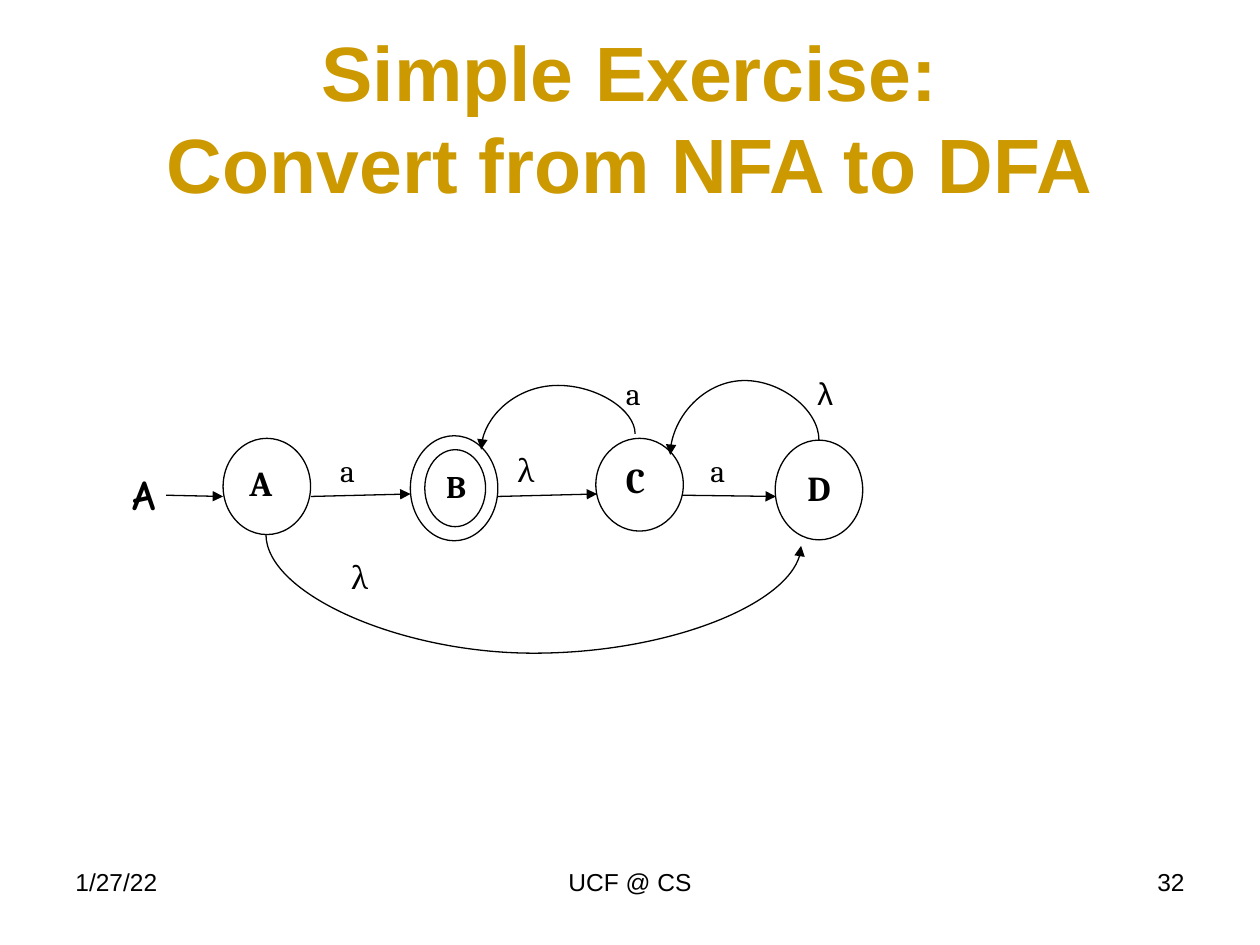
from lxml.etree import SubElement
from pptx import Presentation
from pptx.dml.color import RGBColor
from pptx.enum.shapes import MSO_CONNECTOR, MSO_SHAPE
from pptx.enum.text import MSO_ANCHOR, MSO_AUTO_SIZE, PP_ALIGN
from pptx.oxml.ns import qn
from pptx.util import Pt

BLACK = RGBColor(0, 0, 0)
WHITE = RGBColor(255, 255, 255)
GOLD = RGBColor(0xCC, 0x99, 0x00)
SERIF = "Cambria"
SANS = "Arial"


class Board:
    thin = Pt(0.75)
    base = {"name": SERIF, "size": Pt(18), "bold": False}

    def __init__(self, slide):
        self.slide = slide
        self.shapes = slide.shapes

    def put(self, shape, text, align=PP_ALIGN.LEFT, color=BLACK,
            anchor=MSO_ANCHOR.TOP, **style):
        frame = shape.text_frame
        frame.text = text
        form = {"word_wrap": True, "auto_size": MSO_AUTO_SIZE.NONE,
                "vertical_anchor": anchor}
        for key, value in form.items():
            setattr(frame, key, value)
        for para in frame.paragraphs:
            para.alignment = align
            for run in para.runs:
                for key, value in {**self.base, **style}.items():
                    setattr(run.font, key, value)
                run.font.color.rgb = color

    def title(self, text, box, **style):
        head = self.shapes.title
        for key, value in zip(("left", "top", "width", "height"), box):
            setattr(head, key, Pt(value))
        self.put(head, text, PP_ALIGN.CENTER, GOLD, MSO_ANCHOR.MIDDLE, **style)

    def label(self, text, box, align=PP_ALIGN.LEFT, **style):
        self.put(self.shapes.add_textbox(*map(Pt, box)), text, align, **style)

    def ring(self, box):
        oval = self.shapes.add_shape(MSO_SHAPE.OVAL, *map(Pt, box))
        oval.shadow.inherit = False
        oval.fill.solid()
        oval.fill.fore_color.rgb = WHITE
        oval.line.color.rgb = BLACK
        oval.line.width = self.thin
        return oval

    def link(self, kind, start, end):
        line = self.shapes.add_connector(kind, *map(Pt, (*start, *end)))
        line.line.color.rgb = BLACK
        line.line.width = self.thin
        SubElement(line.get_or_add_ln(), qn("a:tailEnd"), type="triangle")
        SubElement(line.element.spPr, qn("a:effectLst"))
        return line

    def arrow(self, start, end):
        self.link(MSO_CONNECTOR.STRAIGHT, start, end)

    def arc(self, start, end, peak):
        mid_x = (start[0] + end[0]) / 2
        mid_y = (start[1] + end[1]) / 2
        turned = [(mid_x - (y - mid_y), mid_y + (x - mid_x))
                  for x, y in (start, end)]
        line = self.link(MSO_CONNECTOR.CURVE, *turned)
        props = line.element.spPr
        props.find(qn("a:xfrm")).set("rot", str(270 * 60000))
        bend = round((peak - start[1]) / (end[1] - start[1]) * 100000)
        shape = props.find(qn("a:prstGeom"))
        guides = shape.find(qn("a:avLst"))
        if guides is None:
            guides = SubElement(shape, qn("a:avLst"))
        SubElement(guides, qn("a:gd"), name="adj1", fmla=f"val {bend}")


def main():
    deck = Presentation()
    deck.slide_width, deck.slide_height = Pt(720), Pt(540)
    board = Board(deck.slides.add_slide(deck.slide_layouts[5]))

    board.title("Simple Exercise:\vConvert from NFA to DFA",
                (36, 21.6, 648, 90), name=SANS, size=Pt(44), bold=True)
    for text, left, width, align in (
            ("1/27/22", 36, 168, PP_ALIGN.LEFT),
            ("UCF @ CS", 246, 228, PP_ALIGN.CENTER),
            ("32", 516, 168, PP_ALIGN.RIGHT)):
        board.label(text, (left, 492, width, 37.5), align, name=SANS, size=Pt(14))

    for left, top, height in ((127.5, 250.5, 55), (234.5, 249, 60),
                              (340.5, 250.5, 53), (443, 251.5, 57)):
        board.ring((left, top, 50, height))
    final = board.ring((242.75, 257, 34.75, 44))
    board.put(final, "B", bold=True)

    for start, end in (((95, 283), (127.5, 283.7)),
                       ((177.7, 283.7), (234.6, 282.3)),
                       ((284.5, 283.7), (341.2, 282.3)),
                       ((389.8, 283), (443.4, 283.7))):
        board.arrow(start, end)
    for start, end, peak in (((468, 251.5), (383, 260), 217.5),
                             ((363, 248), (275, 257), 220.3),
                             ((152, 305.3), (457.8, 311.9), 373.2)):
        board.arc(start, end, peak)

    for name, left, top in (("A", 135.4, 260), ("C", 350.6, 258.5),
                            ("D", 454.3, 263)):
        board.label(name, (left, top, 25, 46), size=Pt(20), bold=True)
    board.label("A", (68.4, 264.2, 25, 35), name="Comic Neue",
                size=Pt(24), bold=True)
    for sign, left, top, font in (("a", 187.2, 254.2, SERIF),
                                  ("λ", 288.7, 254.2, SERIF),
                                  ("a", 398.9, 254.2, SERIF),
                                  ("a", 350.6, 210.2, SERIF),
                                  ("λ", 460, 210.2, SANS),
                                  ("λ", 193.7, 315.4, SERIF)):
        board.label(sign, (left, top, 36.7, 36), name=font)

    deck.save("out.pptx")


if __name__ == "__main__":
    main()
